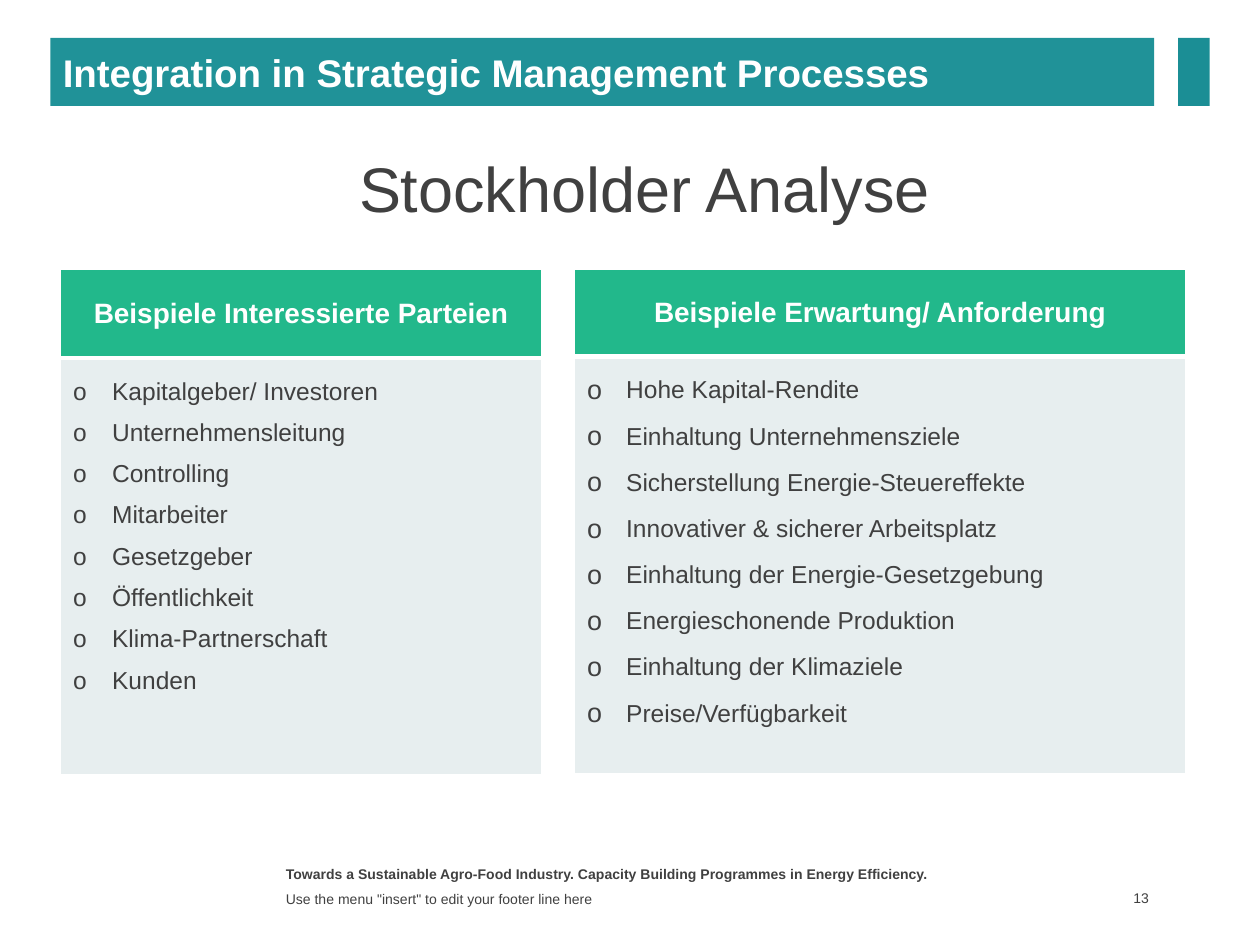
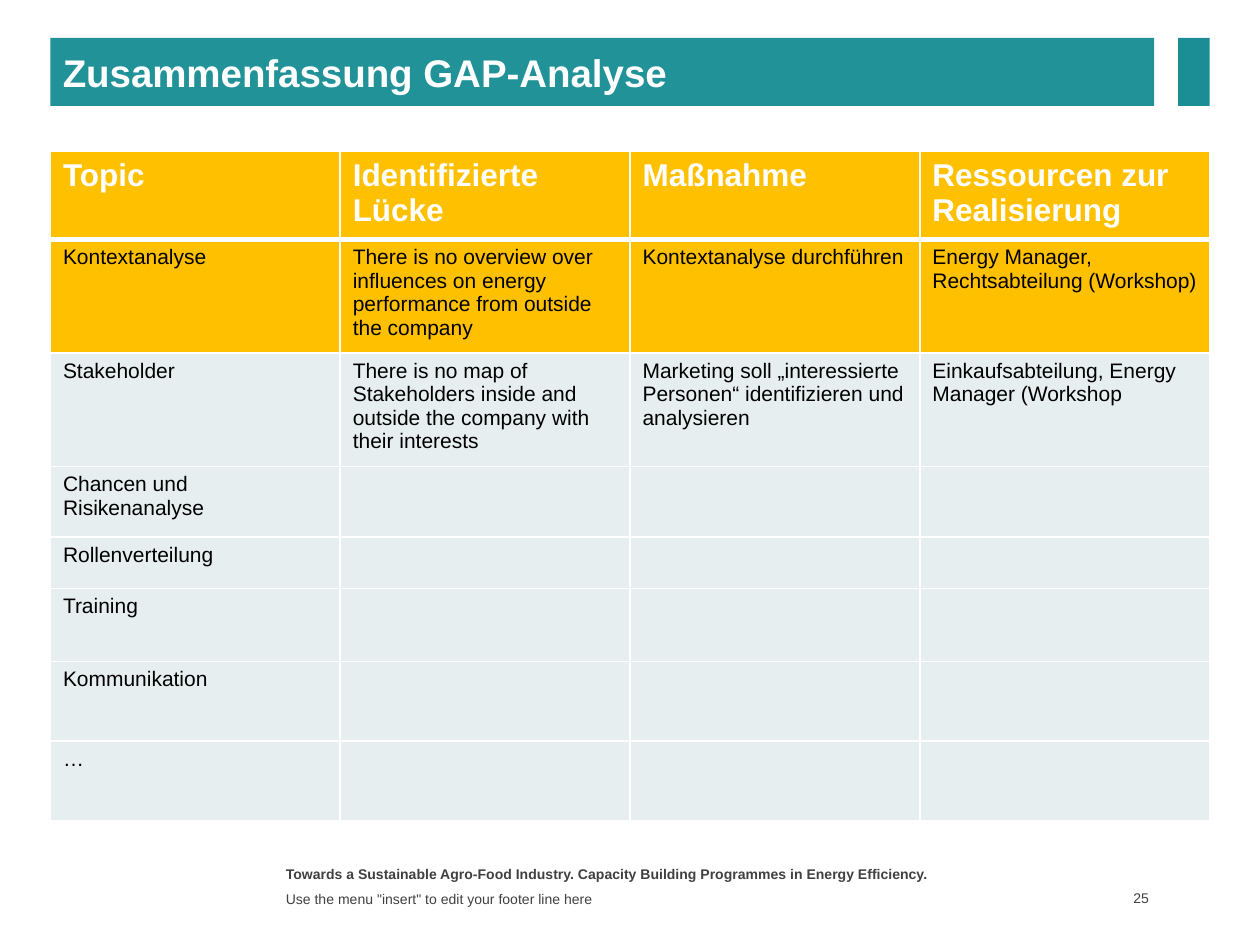
"""Build two slides on stakeholders and gap analysis with a shared frame."""
import pptx
import pptx.dml.color
import pptx.enum.shapes
import pptx.enum.text
import pptx.oxml
import pptx.oxml.ns
import pptx.util

INK, WHITE, BLACK = "404040", "FFFFFF", "000000"
BAND, TAB, GREEN, GOLD, PALE = "209298", "1B8E95", "22B88B", "FFC000", "E7EEEF"
FONT = "Arial"
LEFT, TOP, HIGH = 0.4, 0.3, 0.54
MOTTO = "Towards a Sustainable Agro-Food Industry. Capacity Building Programmes in Energy Efficiency."
HINT = 'Use the menu "insert" to edit your footer line here'

LISTS = [
    dict(x=0.48, wide=3.82, rows=[0.7, 3.31], gap=0, size=100,
         head="Beispiele Interessierte Parteien",
         items=["Kapitalgeber/ Investoren", "Unternehmensleitung", "Controlling",
                "Mitarbeiter", "Gesetzgeber", "Öffentlichkeit",
                "Klima-Partnerschaft", "Kunden"]),
    dict(x=4.56, wide=4.85, rows=[0.69, 3.31], gap=2.8, size=110,
         head="Beispiele Erwartung/ Anforderung",
         items=["Hohe Kapital-Rendite", "Einhaltung Unternehmensziele",
                "Sicherstellung Energie-Steuereffekte",
                "Innovativer & sicherer Arbeitsplatz",
                "Einhaltung der Energie-Gesetzgebung", "Energieschonende Produktion",
                "Einhaltung der Klimaziele", "Preise/Verfügbarkeit"]),
]

GAPS = [
    (0.63, ["Topic", "Identifizierte Lücke", "Maßnahme", "Ressourcen zur Realisierung"]),
    (0.81, ["Kontextanalyse",
            "There is no overview over influences on energy performance from outside the company",
            "Kontextanalyse durchführen", "Energy Manager, Rechtsabteilung (Workshop)"]),
    (0.81, ["Stakeholder",
            "There is no map of Stakeholders inside and outside the company with their interests",
            "Marketing soll „interessierte Personen“ identifizieren und analysieren",
            "Einkaufsabteilung, Energy Manager (Workshop"]),
    (0.56, ["Chancen und Risikenanalyse"]),
    (0.41, ["Rollenverteilung"]),
    (0.58, ["Training"]),
    (0.63, ["Kommunikation"]),
    (0.63, ["…"]),
]

inch = pptx.util.Inches
MID = pptx.enum.text.MSO_ANCHOR.MIDDLE
ALIGN = pptx.enum.text.PP_ALIGN


def hue(code):
    return pptx.dml.color.RGBColor.from_string(code)


def node(tag, **attrs):
    item = pptx.oxml.parse_xml(f"<a:{tag} {pptx.oxml.ns.nsdecls('a')}/>")
    for key, value in attrs.items():
        item.set(key, str(value))
    return item


def style(par, size, color, bold=False, align=None):
    par.alignment = align
    font = par.font
    font.name, font.size, font.bold = FONT, pptx.util.Pt(size), bold
    font.color.rgb = hue(color)


def label(slide, box, text, size, bold=False, align=None, anchor=MID, right=0.1):
    frame = slide.shapes.add_textbox(*map(inch, box)).text_frame
    frame.word_wrap, frame.vertical_anchor = True, anchor
    frame.margin_right = inch(right)
    frame.text = text
    style(frame.paragraphs[0], size, INK, bold, align)


def block(slide, x, wide, color):
    kind = pptx.enum.shapes.MSO_SHAPE.RECTANGLE
    shape = slide.shapes.add_shape(kind, *map(inch, (x, TOP, wide, HIGH)))
    shape.shadow.inherit = False
    shape.fill.solid()
    shape.fill.fore_color.rgb = hue(color)
    shape.line.fill.background()
    return shape


def start(deck, title, number):
    slide = deck.slides.add_slide(deck.slide_layouts[6])
    label(slide, (2.17, 6.82, 5.5, 0.21), MOTTO, 8, True,
          anchor=pptx.enum.text.MSO_ANCHOR.TOP)
    label(slide, (2.17, 7.04, 5.5, 0.19), HINT, 8)
    label(slide, (8.6, 7.03, 0.56, 0.2), number, 8, align=ALIGN.RIGHT, right=0.04)
    frame = block(slide, LEFT, 8.76, BAND).text_frame
    frame.text, frame.vertical_anchor = title, MID
    style(frame.paragraphs[0], 22, WHITE, True, ALIGN.LEFT)
    block(slide, 9.35, 0.25, TAB)
    return slide


def grid(slide, x, y, cols, rows):
    box = (x, y, sum(cols), sum(rows))
    table = slide.shapes.add_table(len(rows), len(cols), *map(inch, box)).table
    table.horz_banding = False
    for part, sizes in ((table.columns, cols), (table.rows, rows)):
        for index, size in enumerate(sizes):
            if part is table.columns:
                part[index].width = inch(size)
            else:
                part[index].height = inch(size)
    return table


def paint(table, row, col, color):
    cell = table.cell(row, col)
    props = cell._tc.get_or_add_tcPr()
    for side in "LRTB":
        thick = (row, side) in ((0, "B"), (1, "T"))
        line = node("ln" + side, w=pptx.util.Pt(3 if thick else 1))
        fill = node("solidFill")
        fill.append(node("srgbClr", val=WHITE))
        line.append(fill)
        props.append(line)
    cell.fill.solid()
    cell.fill.fore_color.rgb = hue(color)
    return cell


def bullet(par, size):
    props = par._p.get_or_add_pPr()
    props.set("marL", str(inch(0.31)))
    props.set("indent", str(-inch(0.31)))
    props.append(node("buSzPct", val=size * 1000))
    props.append(node("buFont", typeface=FONT))
    props.append(node("buChar", char="o"))


def panel(slide, x, wide, rows, gap, size, head, items):
    table = grid(slide, x, 2.14, [wide], rows)
    top = paint(table, 0, 0, GREEN)
    top.text, top.vertical_anchor = head, MID
    style(top.text_frame.paragraphs[0], 16, WHITE, True, ALIGN.CENTER)
    body = paint(table, 1, 0, PALE)
    body.text = "\n".join(items)
    for index, par in enumerate(body.text_frame.paragraphs):
        bullet(par, size)
        par.line_spacing = 1.5
        if index and gap:
            par.space_before = pptx.util.Pt(gap)
        style(par, 14, INK)


def matrix(slide):
    wide = 4
    table = grid(slide, LEFT, 1.2, [2.3] * wide, [high for high, _ in GAPS])
    for row, (_, texts) in enumerate(GAPS):
        look = (12, BLACK) if row else (18, WHITE, True)
        for col in range(wide):
            cell = paint(table, row, col, GOLD if row < 2 else PALE)
            if col < len(texts):
                cell.text = texts[col]
            style(cell.text_frame.paragraphs[0], *look)


def main():
    deck = pptx.Presentation()
    deck.slide_width, deck.slide_height = inch(10), inch(7.5)
    slide = start(deck, "Integration in Strategic Management Processes", "13")
    label(slide, (0.15, 1.33, 9.93, 0.31), "Stockholder Analyse", 36, align=ALIGN.CENTER)
    for item in LISTS:
        panel(slide, **item)
    matrix(start(deck, "Zusammenfassung GAP-Analyse", "25"))
    deck.save("out.pptx")


if __name__ == "__main__":
    main()
